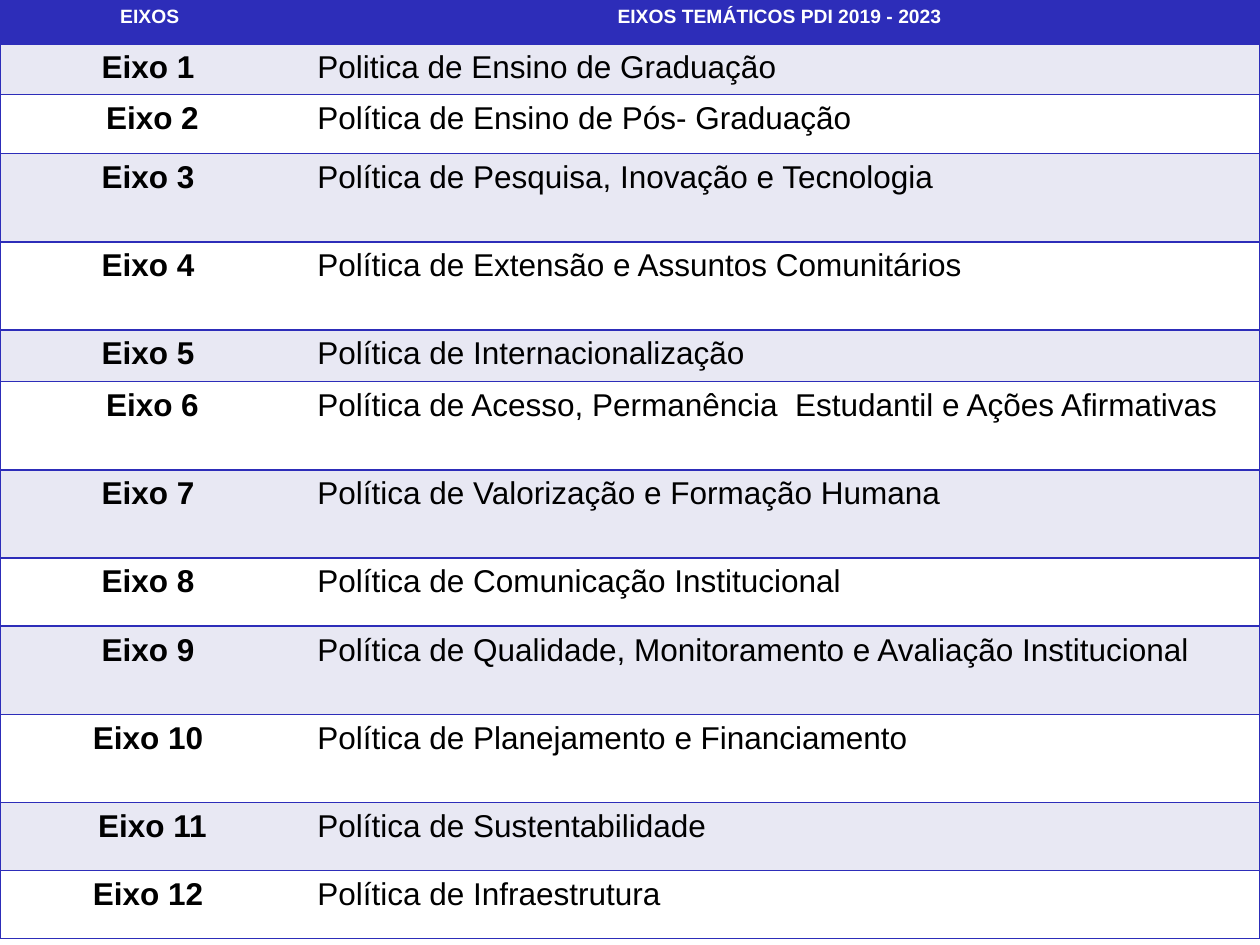
from dataclasses import dataclass

from lxml import etree
from pptx import Presentation, util as u
from pptx.dml.color import RGBColor
from pptx.enum import text
from pptx.oxml import ns


@dataclass(frozen=True)
class Theme:
    font: str = "Arial"
    head_size: int = 11
    body_size: int = 18
    blue: str = "2D2DB9"
    band: str = "E8E8F3"
    white: str = "FFFFFF"
    black: str = "000000"
    border: float = 1


AXES = [
    ("Eixo 1 ", "Politica de Ensino de Graduação", 0.4),
    ("Eixo 2", "Política de Ensino de Pós- Graduação ", 0.47),
    ("Eixo 3 ", "Política de Pesquisa, Inovação e Tecnologia ", 0.7),
    ("Eixo 4 ", "Política de Extensão e Assuntos Comunitários", 0.7),
    ("Eixo 5 ", "Política de Internacionalização", 0.41),
    ("Eixo 6", "Política de Acesso, Permanência  Estudantil e Ações Afirmativas", 0.7),
    ("Eixo 7 ", "Política de Valorização e Formação Humana ", 0.7),
    ("Eixo 8 ", "Política de Comunicação Institucional", 0.54),
    ("Eixo 9 ", "Política de Qualidade, Monitoramento e Avaliação Institucional", 0.7),
    ("Eixo 10 ", "Política de Planejamento e Financiamento", 0.7),
    ("Eixo 11", "Política de Sustentabilidade ", 0.54),
    ("Eixo 12 ", "Política de Infraestrutura ", 0.54),
]
HEADER = ("EIXOS ", "EIXOS TEMÁTICOS PDI 2019 - 2023 ", 0.35)
COLUMNS = (2.42, 7.58)


def write(tf, words, *, font, size, color, bold, align):
    p = tf.paragraphs[0]
    p.alignment = align
    r = p.add_run()
    r.text = words
    r.font.name = font
    r.font.size = u.Pt(size)
    r.font.bold = bold
    r.font.color.rgb = RGBColor.from_string(color)


class Deck:
    """Holds the theme and the current slide, and draws elements on it."""

    def __init__(self, prs, theme):
        self.theme = theme
        self.s = prs.slides.add_slide(prs.slide_layouts[6])

    def borders(self, cell, sides):
        tcPr = cell._tc.get_or_add_tcPr()
        for side in "LRTB":
            ln = etree.SubElement(tcPr, ns.qn(f"a:ln{side}"), w=str(u.Pt(self.theme.border)))
            if side in sides:
                fill = etree.SubElement(ln, ns.qn("a:solidFill"))
                etree.SubElement(fill, ns.qn("a:srgbClr"), val=self.theme.blue)
            else:
                etree.SubElement(ln, ns.qn("a:noFill"))

    def cell(self, cell, words, *, fill, sides, **style):
        self.borders(cell, sides)
        cell.fill.solid()
        cell.fill.fore_color.rgb = RGBColor.from_string(fill)
        write(cell.text_frame, words, font=self.theme.font, **style)

    def table(self, rows, columns):
        t = self.theme
        height = sum(row[-1] for row in rows)
        tbl = self.s.shapes.add_table(
            len(rows), len(columns), 0, 0, u.Inches(sum(columns)), u.Inches(height)
        ).table
        for col, width in zip(tbl.columns, columns):
            col.width = u.Inches(width)
        for i, (*words, row_height) in enumerate(rows):
            tbl.rows[i].height = u.Inches(row_height)
            head = i == 0
            fill = t.blue if head else (t.white, t.band)[i % 2]
            for j, label in enumerate(words):
                centred = head or j == 0
                self.cell(
                    tbl.cell(i, j), label, fill=fill, sides=("LTB", "RTB")[j],
                    size=t.head_size if head else t.body_size,
                    color=t.white if head else t.black,
                    bold=centred,
                    align=text.PP_ALIGN.CENTER if centred else text.PP_ALIGN.JUSTIFY,
                )


def main():
    prs = Presentation()
    prs.slide_width, prs.slide_height = u.Inches(10), u.Inches(7.5)
    Deck(prs, Theme()).table([HEADER, *AXES], COLUMNS)
    prs.save("out.pptx")


if __name__ == "__main__":
    main()
